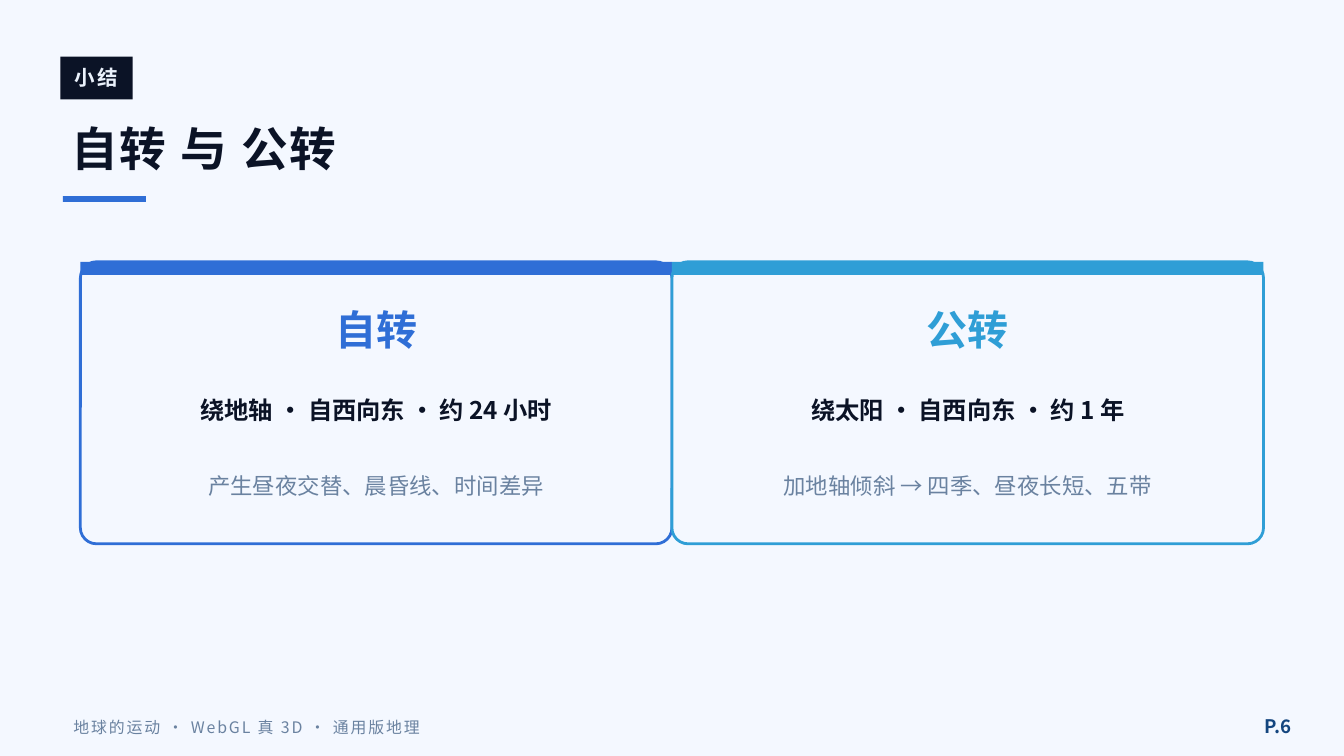
from pptx import Presentation
from pptx.dml.color import RGBColor
from pptx.enum.shapes import MSO_SHAPE
from pptx.enum.text import MSO_ANCHOR, MSO_AUTO_SIZE, PP_ALIGN
from pptx.util import Cm, Pt
from lxml import etree

RECT, ROUND = MSO_SHAPE.RECTANGLE, MSO_SHAPE.ROUNDED_RECTANGLE
LEFT, CENTER, RIGHT = PP_ALIGN.LEFT, PP_ALIGN.CENTER, PP_ALIGN.RIGHT
MIDDLE = MSO_ANCHOR.MIDDLE
NO_FIT = MSO_AUTO_SIZE.NONE
FONT = "Noto Sans CJK SC"
NS = "{http://schemas.openxmlformats.org/drawingml/2006/main}"
COLORS = {
    "bg": "F4F8FF", "ink": "0B1326", "pale": "EAF1FB", "blue": "2F6ED6",
    "cyan": "2F9ED6", "muted": "6A82A0", "navy": "14467F",
}

prs = Presentation()
prs.slide_width, prs.slide_height = Cm(25.4), Cm(14.29)
s = prs.slides.add_slide(prs.slide_layouts[5])
s.background.fill.solid()
s.background.fill.fore_color.rgb = RGBColor.from_string(COLORS["bg"])


def add_text(text, box, size, color, bold=False, align=LEFT, track=0, line=None, sp=None):
    x, y, w, h = [Cm(v) for v in box]
    if sp is None:
        sp = s.shapes.add_textbox(x, y, w, h)
    sp.left, sp.top, sp.width, sp.height = x, y, w, h
    tf = sp.text_frame
    tf.word_wrap = True
    tf.auto_size = NO_FIT
    tf.vertical_anchor = MIDDLE
    p = tf.paragraphs[0]
    p.alignment = align
    if line:
        p.line_spacing = Pt(line)
    r = p.add_run()
    r.text = text
    r.font.size, r.font.bold, r.font.name = Pt(size), bold, FONT
    r.font.color.rgb = RGBColor.from_string(COLORS[color])
    rPr = r.font._element
    etree.SubElement(rPr, NS + "ea").set("typeface", FONT)
    if track:
        rPr.set("spc", str(track * 100))


def add_box(kind, box, fill, line=None):
    sp = s.shapes.add_shape(kind, *[Cm(v) for v in box])
    sp.shadow.inherit = False
    sp.fill.solid()
    sp.fill.fore_color.rgb = RGBColor.from_string(COLORS[fill])
    if line:
        sp.line.color.rgb = RGBColor.from_string(COLORS[line])
        sp.line.width = Pt(1.5)
    else:
        sp.line.fill.background()
    return sp


add_box(RECT, (1.14, 1.07, 1.37, 0.81), "ink")
add_text("小结", (1.14, 1.04, 1.37, 0.86), 11, "pale", bold=True, align=CENTER, track=1)
add_text("自转 与 公转", (1.09, 2, 22.86, 1.57), 25, "ink", bold=True, track=1,
         sp=s.shapes.title)
add_box(RECT, (1.19, 3.71, 1.57, 0.11), "blue")

cards = [
    ("自转", "绕地轴 · 自西向东 · 约 24 小时", "产生昼夜交替、晨昏线、时间差异", "blue"),
    ("公转", "绕太阳 · 自西向东 · 约 1 年", "加地轴倾斜 → 四季、昼夜长短、五带", "cyan"),
]
card_w, card_top, pad = 11.18, 4.95, 0.51
for i, (name, facts, effect, color) in enumerate(cards):
    x = 1.52 + i * card_w
    inner_x, inner_w = x + pad, card_w - 2 * pad
    card = add_box(ROUND, (x, card_top, card_w, 5.33), "bg", line=color)
    card.adjustments[0] = 0.057
    add_box(RECT, (x, card_top, card_w, 0.25), color)
    add_text(name, (x, 5.59, card_w, 1.27), 22, color, bold=True, align=CENTER)
    add_text(facts, (inner_x, 7.24, inner_w, 1.02), 13, "ink", bold=True, align=CENTER)
    add_text(effect, (inner_x, 8.4, inner_w, 1.52), 12, "muted", align=CENTER, line=16)

add_text("地球的运动 · WebGL 真 3D · 通用版地理", (1.14, 13.36, 16.51, 0.76), 8.5, "muted", track=1)
add_text("P.6", (23.13, 13.32, 1.52, 0.81), 10, "navy", bold=True, align=RIGHT)

prs.save("out.pptx")
